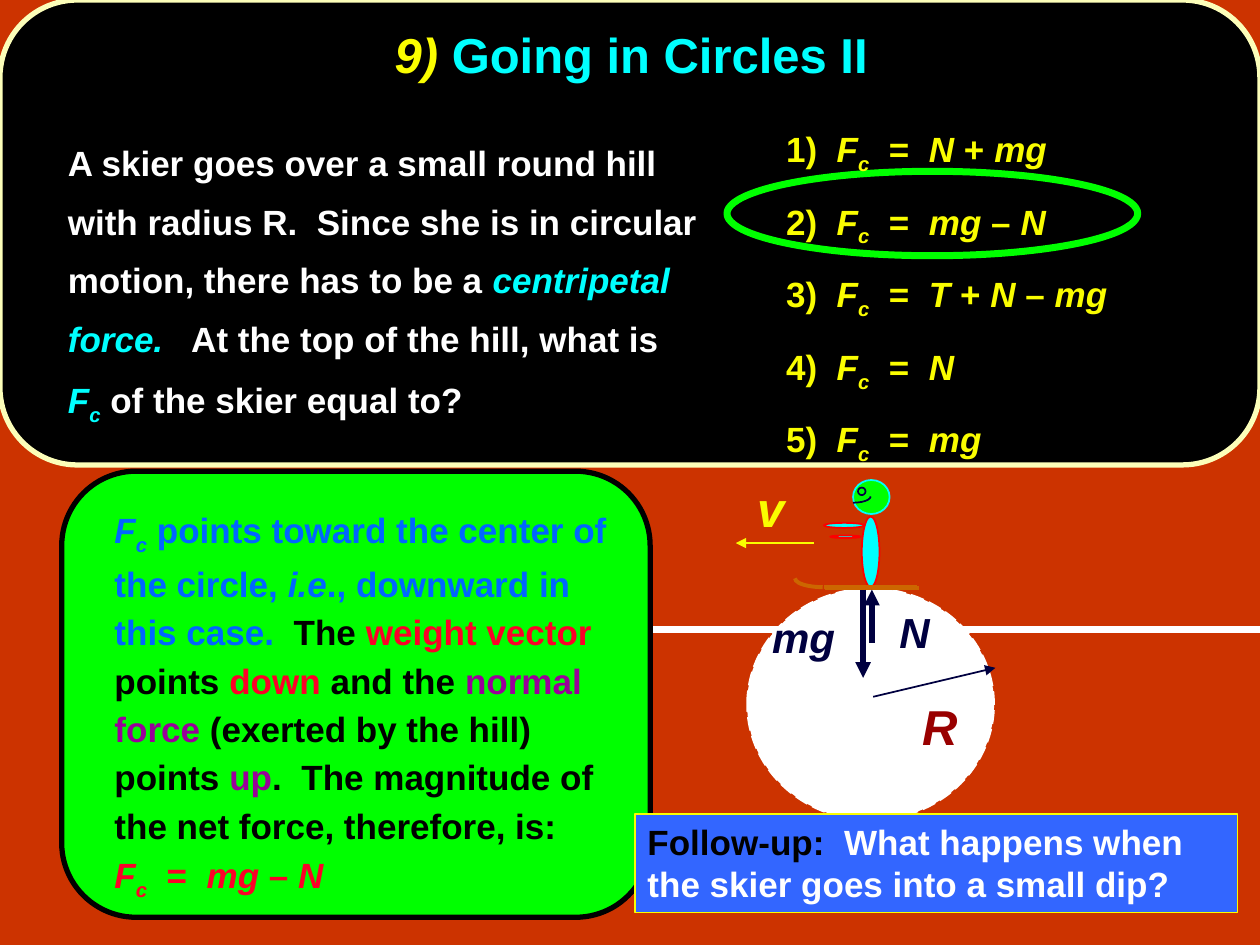
"""Build a physics quiz slide about a skier passing over a round hill."""
import math

from lxml import etree
from pptx import Presentation
from pptx import util as u
from pptx.dml.color import RGBColor
from pptx.enum import dml, shapes, text
from pptx.oxml import ns

COLORS = {
    "rust": "CC3300", "black": "000000", "white": "FFFFFF", "yellow": "FAFD00",
    "cream": "FCFEB9", "cyan": "00FFFF", "green": "00FF00", "red": "FC0128",
    "outline": "FC0000", "navy": "000040", "maroon": "990000", "ski": "CC6600",
    "blue": "0066FF", "banner": "3366FF", "purple": "990099",
}
RGB = {name: RGBColor.from_string(value) for name, value in COLORS.items()}


def write(para, words, color="white", size=20, italic=False, sub=False):
    span = para.add_run()
    span.text = words
    font = span.font
    font.name, font.size, font.bold, font.italic = "Arial", u.Pt(size), True, italic
    font.color.rgb = RGB[color]
    if sub:
        font._element.set("baseline", "-25000")


def formula(color, expression=""):
    symbol = {"color": color, "italic": True}
    spans = [("F", symbol), ("c", {**symbol, "sub": True})]
    lead = "  =  "
    for token in expression.split():
        if token.isalpha():
            spans += [(lead, {"color": color}), (token, symbol)]
        else:
            lead = f" {token} "
    return spans


deck = Presentation()
deck.slide_width, deck.slide_height = u.Inches(10), u.Inches(7.5)
page = deck.slides.add_slide(deck.slide_layouts[6])
page.background.fill.solid()
page.background.fill.fore_color.rgb = RGB["rust"]

head_x, head_y, head_radius = 6.92, 3.95, 0.12
strands, first_angle, last_angle = 56, 125, -10
hair = []
for strand in range(strands):
    angle = first_angle + (last_angle - first_angle) * strand / (strands - 1)
    tip_radius = 0.23 + 0.03 * math.sin(3 * strand)
    for radius, lean in [(head_radius, 8), (tip_radius, 0)]:
        turn = math.radians(angle + lean)
        hair.append((head_x + radius * math.cos(turn), head_y - radius * math.sin(turn)))

curves = [(hair, "yellow", 1)]
half_steps = 12
for left_end, dip, right_end, steepness in [
    ((3.89, 5.02), (5.68, 5.39), (7.31, 4.85), 1.4),
    ((6.91, 4.9), (8.1, 5.14), (10, 4.73), 2),
]:
    slope = []
    for step in range(-half_steps, half_steps + 1):
        end = left_end if step < 0 else right_end
        part = abs(step) / half_steps
        slope.append((dip[0] + (end[0] - dip[0]) * part,
                      dip[1] + (end[1] - dip[1]) * part ** steepness))
    curves.append((slope, "white", 4))

drawn = []
for points, color, width in curves:
    builder = page.shapes.build_freeform(*points[0], scale=u.Inches(1))
    builder.add_line_segments(points[1:], close=False)
    drawn.append((builder.convert_to_shape(), None, color, width))

kind = shapes.MSO_SHAPE
outlines = {
    "hill": (kind.OVAL, (5.93, 4.67, 1.96, 1.84), "white", "white", 1),
    "body": (kind.OVAL, (6.84, 4.1, 0.14, 0.56), "cyan", "outline", 1),
    "head": (kind.OVAL, (6.77, 3.81, 0.29, 0.27), "green", "cyan", 1),
    "eye": (kind.OVAL, (6.81, 3.87, 0.06, 0.06), None, "navy", 1),
    "near arm": (kind.OVAL, (6.54, 4.15, 0.32, 0.04), "cyan", "outline", 1),
    "far arm": (kind.OVAL, (6.59, 4.25, 0.24, 0.02), "cyan", "outline", 1),
    "ski tip": (kind.ARC, (6.31, 4.52, 0.44, 0.14), None, "ski", 2.25),
    "smile": (kind.ARC, (6.63, 3.89, 0.28, 0.1), None, "navy", 1),
    "question panel": (kind.ROUNDED_RECTANGLE, (0, 0, 10, 3.69), "black", "cream", 3),
    "answer panel": (kind.ROUNDED_RECTANGLE, (0.49, 3.74, 4.67, 3.54), "green", "black", 3),
    "answer ring": (kind.OVAL, (5.77, 1.36, 3.26, 0.67), None, "green", 4),
    "banner": (kind.RECTANGLE, (5.04, 6.46, 4.78, 0.78), "banner", "yellow", 0.75),
}
named = {}
for name, (preset, place, *look) in outlines.items():
    named[name] = page.shapes.add_shape(preset, *map(u.Inches, place))
    drawn.append((named[name], *look))

for shape, fill, color, width in drawn:
    shape.shadow.inherit = False
    if fill:
        shape.fill.solid()
        shape.fill.fore_color.rgb = RGB[fill]
    else:
        shape.fill.background()
    shape.line.color.rgb = RGB[color]
    shape.line.width = u.Pt(width)

named["hill"].line.dash_style = dml.MSO_LINE.LONG_DASH
degree = 0.6
for name, start, end in [("ski tip", 90, 180), ("smile", 0, 90)]:
    for index, angle in enumerate((start, end)):
        named[name].adjustments[index] = angle * degree

connectors = {
    "ski": ((6.54, 4.66, 7.28, 4.66), "ski", 2.25),
    "ski edge": ((6.55, 4.67, 7.29, 4.67), "ski", 2.25),
    "radius arrow": ((6.93, 5.53, 7.9, 5.3), "navy", 1),
    "velocity arrow": ((6.46, 4.31, 5.84, 4.31), "yellow", 1),
    "normal arrow": ((6.92, 5.1, 6.92, 4.68), "navy", 3),
    "weight arrow": ((6.85, 4.68, 6.85, 5.38), "navy", 3),
}
for name, (ends, color, width) in connectors.items():
    connector = page.shapes.add_connector(shapes.MSO_CONNECTOR.STRAIGHT, *map(u.Inches, ends))
    connector.line.color.rgb = RGB[color]
    connector.line.width = u.Pt(width)
    properties = connector._element.spPr
    if name.endswith("arrow"):
        etree.SubElement(properties.get_or_add_ln(), ns.qn("a:tailEnd"), type="triangle")
    etree.SubElement(properties, ns.qn("a:effectLst"))

for words, place, color, size in [
    ("R", (7.22, 5.53, 0.48, 0.52), "maroon", 28),
    ("v", (5.91, 3.8, 0.41, 0.52), "yellow", 28),
    ("mg", (6.03, 4.85, 0.7, 0.46), "navy", 24),
    ("N", (7.04, 4.81, 0.44, 0.46), "navy", 24),
]:
    label = page.shapes.add_textbox(*map(u.Inches, place)).text_frame
    label.word_wrap = False
    label.paragraphs[0].line_spacing = 0.9
    write(label.paragraphs[0], words, color, size, italic=True)

title = [("9) ", {"color": "yellow", "size": 28, "italic": True}),
         ("Going in Circles II", {"color": "cyan", "size": 28})]
question = [
    ("A skier goes over a small round hill with radius R.  Since she is in circular "
     "motion, there has to be a ", {}),
    ("centripetal force.", {"color": "cyan", "italic": True}),
    ("   At the top of the hill, what is ", {}),
    *formula("cyan"),
    (" of the skier equal to?", {}),
]
answers = ["N + mg", "mg – N", "T + N – mg", "N", "mg"]
options = [[(f"{number})  ", {"color": "yellow"}), *formula("yellow", answer)]
           for number, answer in enumerate(answers, 1)]
explanation = formula("blue") + [
    (words, {"color": color, "italic": words == "i.e"}) for words, color in [
        (" points toward the center of the circle, ", "blue"), ("i.e", "blue"),
        ("., downward in this case.", "blue"), ("  The ", "black"),
        ("weight vector", "red"), (" points ", "black"), ("down", "red"),
        (" and the ", "black"), ("normal force", "purple"),
        (" (exerted by the hill) points ", "black"), ("up", "purple"),
        (".  The magnitude of the net force, therefore, is:", "black"),
    ]]
follow_up = [("Follow-up:", {"color": "black"}),
             ("  What happens when the skier goes into a small dip?", {})]

text_boxes = [
    ((0.81, 3.93, 4.22, 2.42), 1.15, 0, [explanation, formula("red", answers[1])]),
    ((0.44, 0.94, 5.21, 2.74), 1.4, 0, [question]),
    ((1.02, 0, 7.98, 0.92), 0.9, 0, [title]),
    ((6.14, 0.85, 3.62, 2.73), 1.3, 6, options),
    (None, 1, 0, [follow_up]),
]
for place, spacing, before, paragraphs in text_boxes:
    box = page.shapes.add_textbox(*map(u.Inches, place)) if place else named["banner"]
    frame = box.text_frame
    frame.word_wrap = True
    frame.vertical_anchor = text.MSO_ANCHOR.MIDDLE if title in paragraphs else text.MSO_ANCHOR.TOP
    for index, spans in enumerate(paragraphs):
        para = frame.add_paragraph() if index else frame.paragraphs[0]
        para.alignment = text.PP_ALIGN.CENTER if spans is title else text.PP_ALIGN.LEFT
        para.line_spacing, para.space_before = spacing, u.Pt(before)
        for words, look in spans:
            write(para, words, **look)

deck.save("out.pptx")
